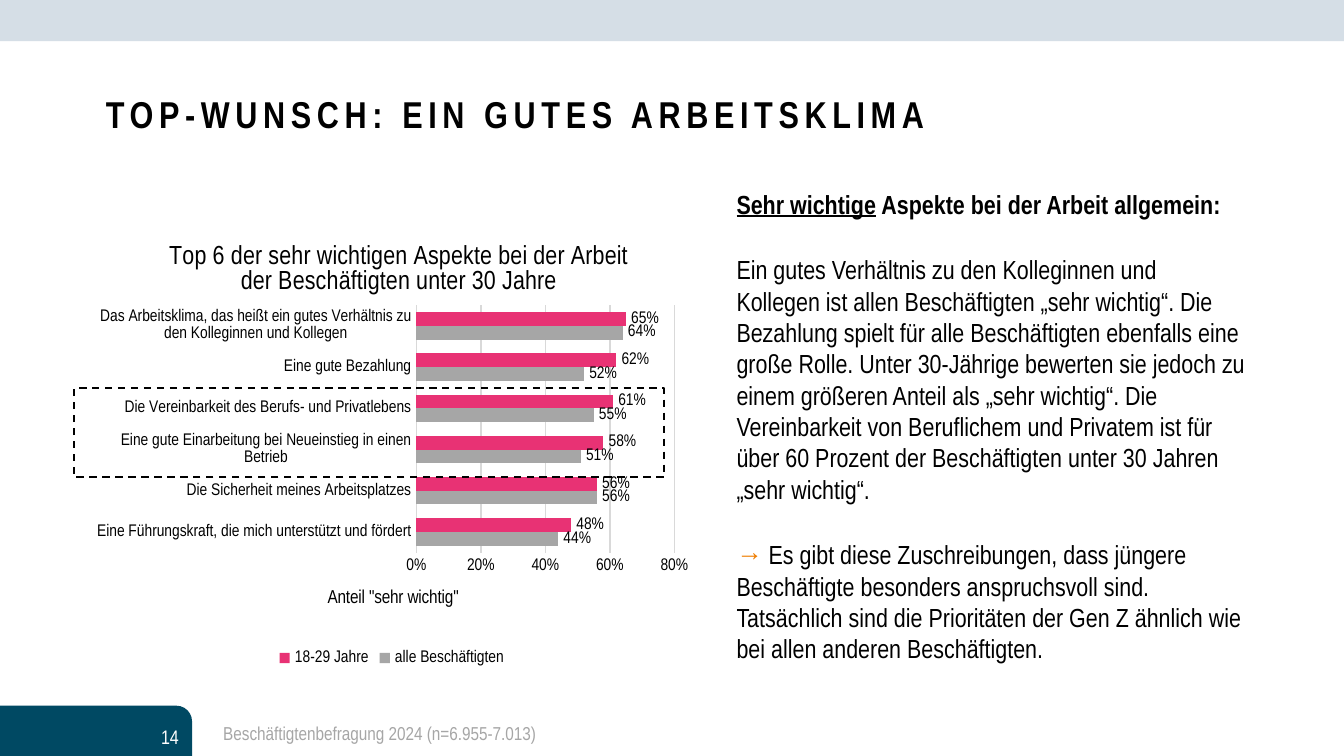
import pptx
import pptx.chart.data
import pptx.dml.color
import pptx.enum.chart
import pptx.enum.dml
import pptx.enum.shapes
import pptx.enum.text
import pptx.oxml
import pptx.oxml.ns
import pptx.util
from pptx.util import Cm, Pt

FONT = "Arial Narrow"
BLACK, WHITE, GREY, LIGHT = "000000", "FFFFFF", "A6A6A6", "D9D9D9"
PINK, ORANGE, PETROL, MIST = "E83274", "EF7D00", "004963", "D5DEE6"

heading = "TOP-WUNSCH: EIN GUTES ARBEITSKLIMA"
page_number = "14"
survey_note = "Beschäftigtenbefragung 2024 (n=6.955-7.013)"
commentary = [
    [("Sehr wichtige", {"bold": True, "underline": True}),
     (" Aspekte bei der Arbeit allgemein:", {"bold": True})],
    [("Ein gutes Verhältnis zu den Kolleginnen und Kollegen ist allen Beschäftigten "
      "„sehr wichtig“. Die Bezahlung spielt für alle Beschäftigten ebenfalls eine große "
      "Rolle. Unter 30-Jährige bewerten sie jedoch zu einem größeren Anteil als „sehr "
      "wichtig“. Die Vereinbarkeit von Beruflichem und Privatem ist für über 60 Prozent "
      "der Beschäftigten unter 30 Jahren „sehr wichtig“.", {})],
    [("→ ", {"color": ORANGE}),
     ("Es gibt diese Zuschreibungen, dass jüngere Beschäftigte besonders anspruchsvoll "
      "sind. Tatsächlich sind die Prioritäten der Gen Z ähnlich wie bei allen anderen "
      "Beschäftigten.", {})],
]
chart_heading = "Top 6 der sehr wichtigen Aspekte bei der Arbeit der Beschäftigten unter 30 Jahre"
axis_heading = 'Anteil "sehr wichtig"'
groups = [("alle Beschäftigten", GREY), ("18-29 Jahre", PINK)]
aspects = [
    ("Eine Führungskraft, die mich unterstützt und fördert", 0.44, 0.48),
    ("Die Sicherheit meines Arbeitsplatzes", 0.56, 0.56),
    ("Eine gute Einarbeitung bei Neueinstieg in einen Betrieb", 0.51, 0.58),
    ("Die Vereinbarkeit des Berufs- und Privatlebens", 0.55, 0.61),
    ("Eine gute Bezahlung", 0.52, 0.62),
    ("Das Arbeitsklima, das heißt ein gutes Verhältnis zu den Kolleginnen und Kollegen",
     0.64, 0.65),
]
PERCENT = "###0%"


def rgb(code):
    return pptx.dml.color.RGBColor.from_string(code)


def style(font, size, color=BLACK, bold=False, underline=False):
    font.name, font.size, font.bold = FONT, Pt(size), bold
    font.color.rgb = rgb(color)
    if underline:
        font.underline = True


def add_text(slide, box, paragraphs, size, anchor="TOP", align="LEFT", inset=(0.25, 0.13), gap=0):
    frame = slide.shapes.add_textbox(*map(Cm, box)).text_frame
    frame.word_wrap = True
    frame.vertical_anchor = getattr(pptx.enum.text.MSO_ANCHOR, anchor)
    frame.margin_left = frame.margin_right = Cm(inset[0])
    frame.margin_top = frame.margin_bottom = Cm(inset[1])
    for index, runs in enumerate(paragraphs):
        paragraph = frame.add_paragraph() if index else frame.paragraphs[0]
        paragraph.alignment = getattr(pptx.enum.text.PP_ALIGN, align)
        paragraph.space_before = Pt(gap if index else 0)
        for words, look in runs:
            run = paragraph.add_run()
            run.text = words
            style(run.font, size, **look)
    return frame


def add_panel(slide, kind, box, fill=None):
    panel = slide.shapes.add_shape(getattr(pptx.enum.shapes.MSO_SHAPE, kind), *map(Cm, box))
    panel.shadow.inherit = False
    if fill:
        panel.fill.solid()
        panel.fill.fore_color.rgb = rgb(fill)
    else:
        panel.fill.background()
    panel.line.fill.background()
    return panel


def layout_xml(x, y, size=None):
    parts = [("xMode", "edge"), ("yMode", "edge"), ("x", x), ("y", y)]
    if size:
        parts = [("layoutTarget", "inner"), *parts, ("w", size[0]), ("h", size[1])]
    inner = "".join(f'<c:{tag} val="{value}"/>' for tag, value in parts)
    return pptx.oxml.parse_xml(
        f'<c:layout {pptx.oxml.ns.nsdecls("c")}><c:manualLayout>{inner}</c:manualLayout></c:layout>')


def place(element, layout, before):
    for old in element.findall(pptx.oxml.ns.qn("c:layout")):
        element.remove(old)
    element.find(pptx.oxml.ns.qn(before)).addprevious(layout)


def add_heading(owner, words, size, x, y):
    title = getattr(owner, "chart_title", None) or owner.axis_title
    run = title.text_frame.paragraphs[0].add_run()
    run.text = words
    style(run.font, size)
    element = title._element
    place(element, layout_xml(x, y), "c:overlay") if element.find(
        pptx.oxml.ns.qn("c:overlay")) is not None else element.find(
        pptx.oxml.ns.qn("c:tx")).addnext(layout_xml(x, y))


def add_ranking(slide, box):
    ranking = pptx.chart.data.CategoryChartData(number_format=PERCENT)
    ranking.categories = [aspect[0] for aspect in aspects]
    for column, (name, _) in enumerate(groups, 1):
        ranking.add_series(name, [aspect[column] for aspect in aspects])
    chart = slide.shapes.add_chart(
        pptx.enum.chart.XL_CHART_TYPE.BAR_CLUSTERED, *map(Cm, box), ranking).chart
    style(chart.font, 10)
    add_heading(chart, chart_heading, 14, 0.13, 0.05)

    plot = chart.plots[0]
    plot.gap_width, plot.overlap, plot.vary_by_categories = 100, 0, False
    for series, (_, color) in zip(plot.series, groups):
        series.format.fill.solid()
        series.format.fill.fore_color.rgb = rgb(color)
        labels = series.data_labels
        labels.show_value = True
        labels.number_format, labels.number_format_is_linked = PERCENT, False
        labels.position = pptx.enum.chart.XL_LABEL_POSITION.OUTSIDE_END
        style(labels.font, 9)
    place(chart._chartSpace.chart.plotArea, layout_xml(0.54, 0.2, (0.42, 0.54)), "c:barChart")

    shares = chart.value_axis
    for axis in (chart.category_axis, shares):
        axis.major_tick_mark = axis.minor_tick_mark = pptx.enum.chart.XL_TICK_MARK.NONE
        style(axis.tick_labels.font, 9)
    shares.minimum_scale, shares.maximum_scale, shares.major_unit = 0, 0.8, 0.2
    shares.tick_labels.number_format = PERCENT
    shares.tick_labels.number_format_is_linked = False
    shares.format.line.fill.background()
    for line in (chart.category_axis.format.line, shares.major_gridlines.format.line):
        line.color.rgb, line.width = rgb(LIGHT), Pt(0.75)
    add_heading(shares, axis_heading, 10, 0.39, 0.81)

    chart.has_legend = True
    chart.legend.position = pptx.enum.chart.XL_LEGEND_POSITION.BOTTOM
    chart.legend.include_in_layout = False
    style(chart.legend.font, 9)


def main():
    deck = pptx.Presentation()
    deck.slide_width, deck.slide_height = Cm(25.4), Cm(14.29)
    slide = deck.slides.add_slide(deck.slide_layouts[6])

    add_panel(slide, "ROUND_1_RECTANGLE", (0, 13.34, 3.63, 0.95), PETROL).adjustments[0] = 0.31
    add_panel(slide, "RECTANGLE", (0, 0, 25.4, 0.78), MIST)
    add_text(slide, (0.86, 13.54, 2.77, 0.76), [[(page_number, {"color": WHITE})]], 10.5,
             anchor="MIDDLE", align="RIGHT")
    add_text(slide, (13.67, 3.43, 10.13, 10.16), commentary, 14, gap=18.2)
    add_text(slide, (4.09, 13.51, 18.34, 0.64), [[(survey_note, {"color": GREY})]], 10,
             inset=(0.13, 0.13))
    title = add_text(slide, (1.75, 0.76, 21.89, 2.77), [[(heading, {"bold": True})]], 20,
                     anchor="MIDDLE")
    title.paragraphs[0].runs[0].font._element.set("spc", "300")

    add_ranking(slide, (1.6, 4.04, 11.61, 8.66))
    highlight = add_panel(slide, "RECTANGLE", (1.4, 7.34, 11.15, 1.68))
    highlight.line.color.rgb, highlight.line.width = rgb(BLACK), Pt(1)
    highlight.line.dash_style = pptx.enum.dml.MSO_LINE.DASH

    deck.save("out.pptx")


if __name__ == "__main__":
    main()
